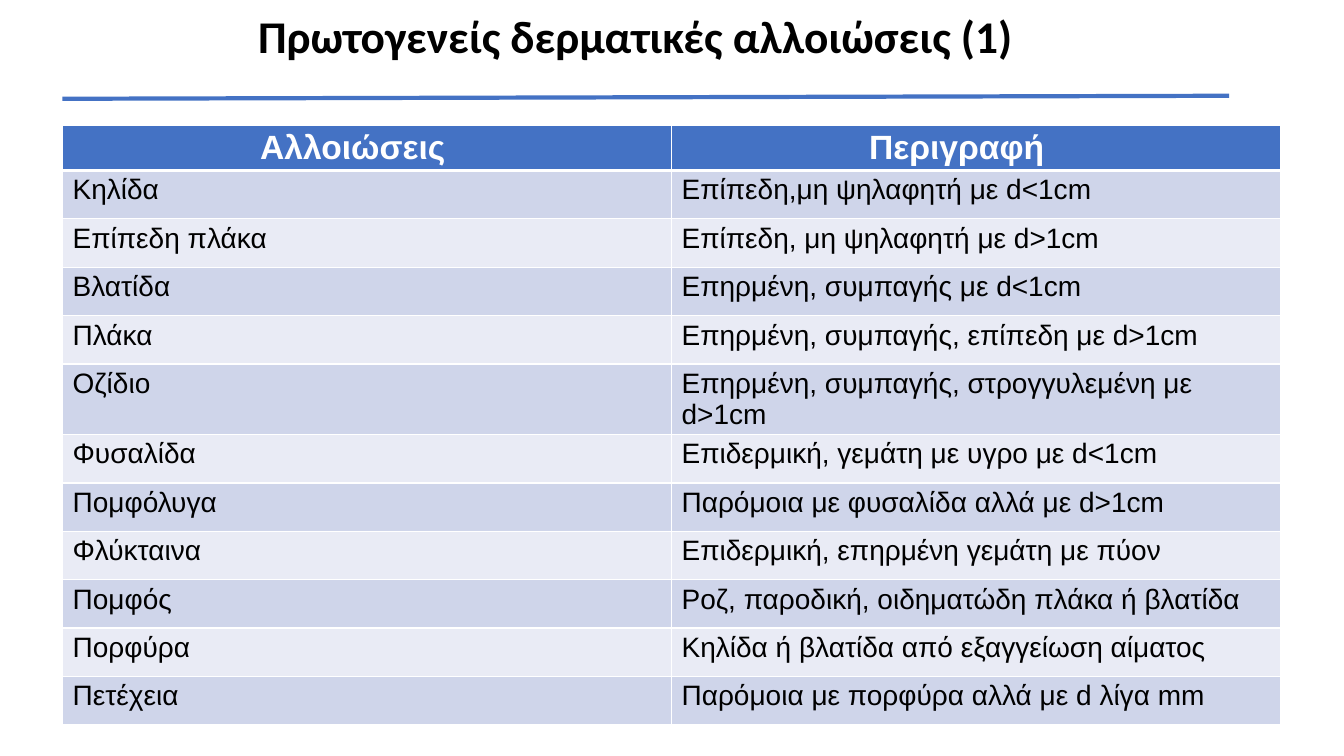
from lxml import etree
from pptx import Presentation
from pptx.dml.color import RGBColor
from pptx.enum.shapes import MSO_CONNECTOR as Link
from pptx.enum.text import MSO_ANCHOR as Anchor, MSO_AUTO_SIZE as Fit, PP_ALIGN as Align
from pptx.oxml.ns import qn
from pptx.util import Inches, Pt

HEAD = ("Αλλοιώσεις", "Περιγραφή")
LESIONS = [
    ("Κηλίδα", "Επίπεδη,μη ψηλαφητή με d<1cm"),
    ("Επίπεδη πλάκα", "Επίπεδη, μη ψηλαφητή με d>1cm"),
    ("Βλατίδα", "Επηρμένη, συμπαγής με d<1cm"),
    ("Πλάκα", "Επηρμένη, συμπαγής, επίπεδη με d>1cm"),
    ("Οζίδιο", "Επηρμένη, συμπαγής, στρογγυλεμένη με d>1cm"),
    ("Φυσαλίδα", "Επιδερμική, γεμάτη με υγρο με d<1cm"),
    ("Πομφόλυγα", "Παρόμοια με φυσαλίδα αλλά με d>1cm"),
    ("Φλύκταινα", "Επιδερμική, επηρμένη γεμάτη με πύον"),
    ("Πομφός", "Ροζ, παροδική, οιδηματώδη πλάκα ή βλατίδα"),
    ("Πορφύρα", "Κηλίδα ή βλατίδα από εξαγγείωση αίματος"),
    ("Πετέχεια", "Παρόμοια με πορφύρα αλλά με d λίγα mm"),
]


def paint(color, value):
    """Set a python-pptx colour from a hex string."""
    color.rgb = RGBColor.from_string(value)


class Deck:
    blue, white, black = "4472C4", "FFFFFF", "000000"
    bands = ("CFD5EA", "E9EBF5")

    def __init__(self, slide):
        self.slide = slide

    def style(self, para, face, size, color, bold=False):
        for run in para.runs:
            font = run.font
            font.name, font.size, font.bold = face, Pt(size), bold
            paint(font.color, color)

    def title(self, text, left, top, width, height, indent):
        box = self.slide.shapes.title
        box.left, box.top = Inches(left), Inches(top)
        box.width, box.height = Inches(width), Inches(height)
        frame = box.text_frame
        frame.text = text
        frame.auto_size = Fit.NONE
        frame.vertical_anchor = Anchor.MIDDLE
        frame.margin_left = Inches(indent)
        para = frame.paragraphs[0]
        para.alignment, para.line_spacing = Align.LEFT, 0.9
        self.style(para, "Calibri", 32.4, self.black, True)

    def rule(self, start, end):
        line = self.slide.shapes.add_connector(
            Link.STRAIGHT, *map(Inches, start + end))
        paint(line.line.color, self.blue)
        line.line.width = Pt(3)
        etree.SubElement(line._element.spPr, qn("a:effectLst"))

    def edge(self, cell, side, width):
        props = cell._tc.get_or_add_tcPr()
        line = etree.SubElement(props, qn("a:ln" + side), w=str(Pt(width)))
        fill = etree.SubElement(line, qn("a:solidFill"))
        etree.SubElement(fill, qn("a:srgbClr"), val=self.white)

    def cell(self, cell, text, row):
        head = row == 0
        thick = {0: "B", 1: "T"}.get(row)
        for side in "LRTB":
            self.edge(cell, side, 3 if side == thick else 1)
        cell.fill.solid()
        paint(cell.fill.fore_color, self.blue if head else self.bands[(row - 1) % 2])
        cell.margin_left = Inches(1.96 if head else 0.1)
        cell.margin_top = cell.margin_bottom = Inches(0.04)
        cell.text_frame.text = text
        self.style(cell.text_frame.paragraphs[0], "Arial", 24 if head else 20,
                   self.white if head else self.black, head)

    def table(self, data, left, top, width, heights):
        cols = len(data[0])
        grid = self.slide.shapes.add_table(
            len(data), cols, Inches(left), Inches(top),
            Inches(width), Inches(sum(heights))).table
        for row, (texts, height) in enumerate(zip(data, heights)):
            grid.rows[row].height = Inches(height)
            for col, text in enumerate(texts):
                self.cell(grid.cell(row, col), text, row)


def main():
    show = Presentation()
    show.slide_width, show.slide_height = Inches(13.33), Inches(7.5)
    deck = Deck(show.slides.add_slide(show.slide_layouts[5]))
    deck.title("Πρωτογενείς δερματικές αλλοιώσεις (1)", 1.21, 0.09, 11.5, 0.59, 1.35)
    heights = [0.44] + [0.48] * len(LESIONS)
    heights[5] = 0.55
    deck.table([HEAD] + LESIONS, 0.62, 1.24, 12.08, heights)
    deck.rule((0.62, 0.98), (12.19, 0.95))
    show.save("out.pptx")


if __name__ == "__main__":
    main()
